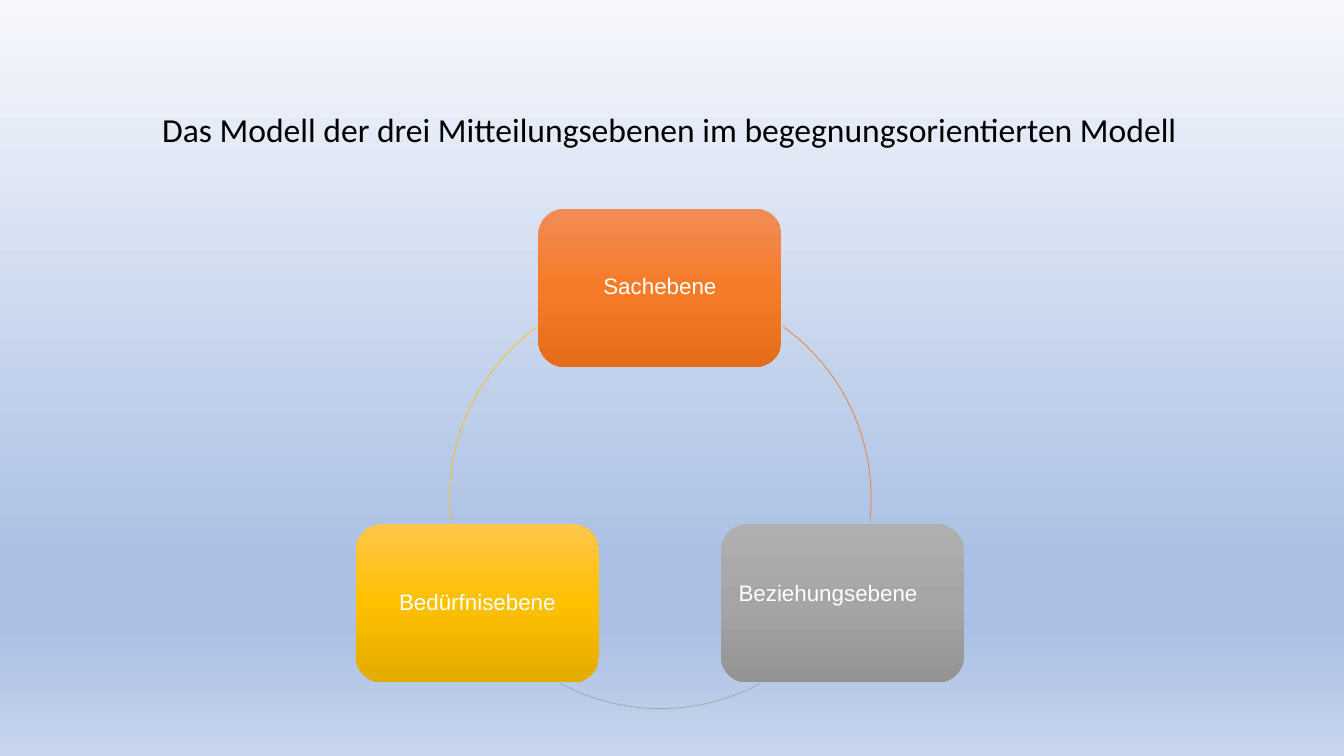
from dataclasses import dataclass
from lxml.etree import SubElement
from pptx import Presentation
from pptx.dml.color import RGBColor
from pptx.enum.shapes import MSO_SHAPE
from pptx.enum.text import MSO_ANCHOR, PP_ALIGN
from pptx.oxml.ns import qn
from pptx.util import Inches, Pt


@dataclass(frozen=True)
class Theme:
    back = ((0, "F6F8FC"), (74, "ABC0E4"), (83, "ABC0E4"), (100, "C7D5ED"))
    orange = ((0, "F18C57"), (50, "F67B28"), (100, "E56C19"))
    gray = ((0, "AFAFAF"), (50, "A5A5A5"), (100, "939393"))
    gold = ((0, "FFC64B"), (50, "FFC000"), (100, "E3AB00"))
    arcs = ("ED7D31", "A5A5A5", "FFC000")
    black = "000000"
    white = "FFFFFF"
    head = ("Calibri", 24)
    body = ("Arial", 16)
    line = 0.5


class Board:
    def __init__(self, deck, theme):
        self.theme = theme
        self.slide = deck.slides.add_slide(deck.slide_layouts[6])
        self.blend(self.slide.background.fill, self.slide.element, theme.back)

    def blend(self, fill, node, stops):
        fill.gradient()
        fill.gradient_angle = 270
        items = next(node.iter(qn("a:gsLst")))
        for old in list(items):
            items.remove(old)
        for pos, color in stops:
            stop = SubElement(items, qn("a:gs"), pos=str(pos * 1000))
            SubElement(stop, qn("a:srgbClr"), val=color)

    def label(self, frame, text, style, color, align=PP_ALIGN.CENTER):
        frame.word_wrap = True
        frame.vertical_anchor = MSO_ANCHOR.MIDDLE
        para = frame.paragraphs[0]
        para.alignment = align
        para.line_spacing = 0.9
        run = para.add_run()
        run.text = text
        run.font.name, size = style
        run.font.size = Pt(size)
        run.font.color.rgb = RGBColor.from_string(color)

    def title(self, text, left, top, width, height):
        box = self.slide.shapes.add_textbox(
            Inches(left), Inches(top), Inches(width), Inches(height))
        self.label(box.text_frame, text, self.theme.head, self.theme.black)

    def card(self, text, left, top, stops, align=PP_ALIGN.CENTER, lift=0):
        card = self.slide.shapes.add_shape(
            MSO_SHAPE.ROUNDED_RECTANGLE,
            Inches(left), Inches(top), Inches(2.41), Inches(1.57))
        card.shadow.inherit = False
        card.line.fill.background()
        self.blend(card.fill, card.element, stops)
        frame = card.text_frame
        frame.margin_left = frame.margin_right = Inches(0.1)
        frame.margin_bottom = Inches(0.05 + lift)
        self.label(frame, text, self.theme.body, self.theme.white, align)

    def arc(self, start, end, color):
        arc = self.slide.shapes.add_shape(
            MSO_SHAPE.ARC, Inches(4.46), Inches(2.85), Inches(4.18), Inches(4.18))
        arc.shadow.inherit = False
        arc.fill.background()
        arc.line.color.rgb = RGBColor.from_string(color)
        arc.line.width = Pt(self.theme.line)
        for index, angle in enumerate((start, end)):
            arc.adjustments[index] = angle * 0.6


def main():
    deck = Presentation()
    deck.slide_width = Inches(13.33)
    deck.slide_height = Inches(7.5)
    theme = Theme()
    board = Board(deck, theme)
    board.title("Das Modell der drei Mitteilungsebenen im begegnungsorientierten Modell",
                0.92, 1.1, 11.44, 0.42)
    board.card("Sachebene", 5.34, 2.07, theme.orange)
    board.card("Beziehungsebene", 7.15, 5.2, theme.gray, PP_ALIGN.LEFT, 0.17)
    board.card("Bedürfnisebene", 3.53, 5.2, theme.gold)
    spans = ((305.7, 6.6), (61.7, 118.3), (173.4, 234.3))
    for (start, end), color in zip(spans, theme.arcs):
        board.arc(start, end, color)
    deck.save("out.pptx")


if __name__ == "__main__":
    main()
